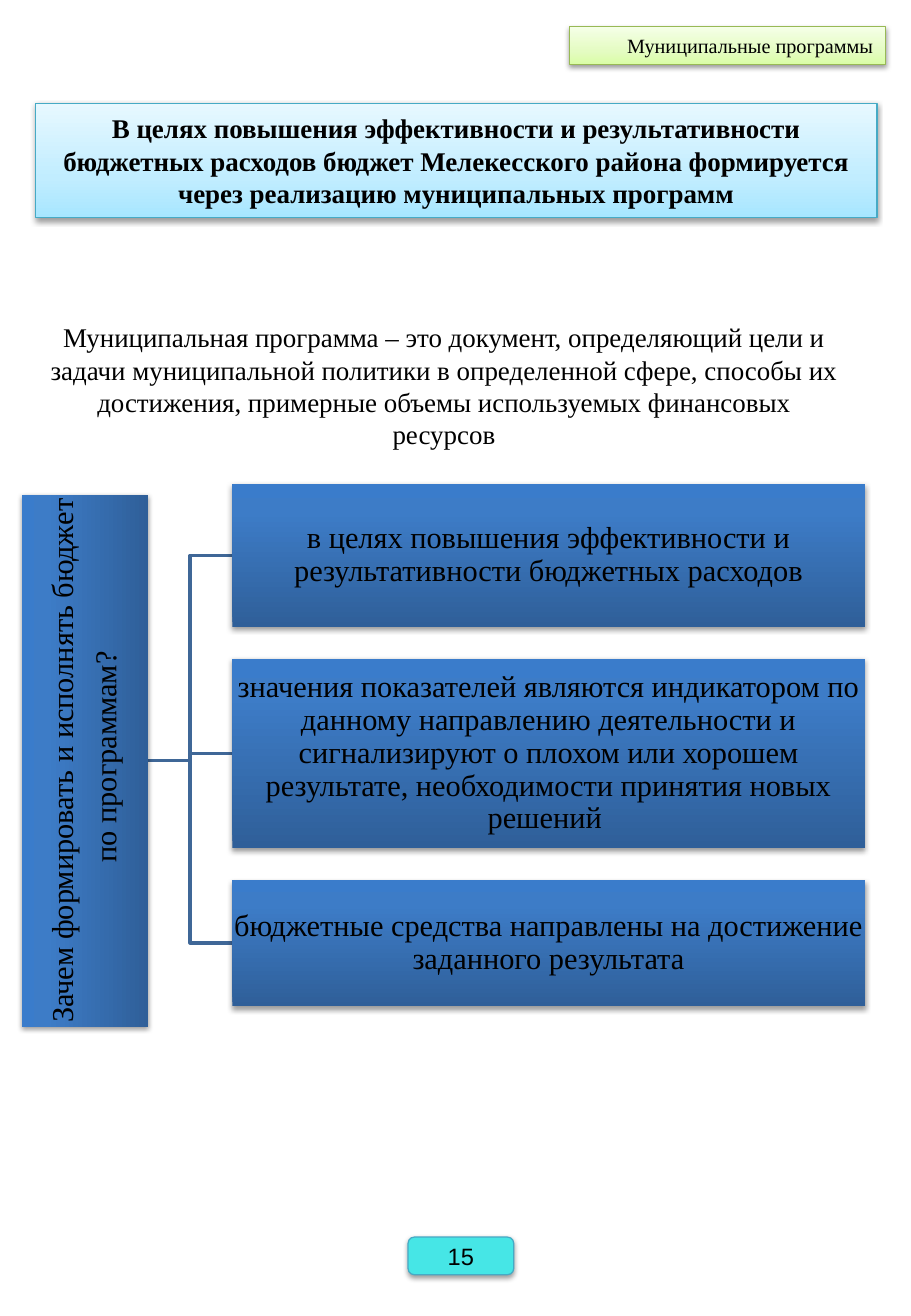
import copy
from dataclasses import dataclass

import pptx
import pptx.dml.color
import pptx.enum.shapes
import pptx.enum.text
import pptx.oxml
import pptx.oxml.ns
import pptx.util

SHAPE = pptx.enum.shapes.MSO_SHAPE
ALIGN = pptx.enum.text.PP_ALIGN
INCH = pptx.util.Inches(1)


@dataclass(frozen=True)
class Theme:
    serif: str = "Times New Roman"
    sans: str = "Arial"
    text: str = "000000"
    branch: str = "3F6797"
    blue_edge: str = "46AAC5"
    green_edge: str = "98B955"
    page_fill: str = "46E6E6"
    # Gradient stops run from the bottom edge to the top edge.
    sky: tuple = ((0, "A7E6FF"), (0.35, "C1EDFF"), (1, "E7F8FF"))
    lime: tuple = ((0, "DAFDA7"), (0.35, "E4FCC2"), (1, "F5FFE7"))
    navy: tuple = ((0, "2F5F99"), (0.8, "3D7CC7"), (1, "3A7CCB"))
    tag_size: int = 12
    page_size: int = 14
    body_size: int = 16
    diagram_size: int = 18


THEME = Theme()


@dataclass(frozen=True)
class Box:
    left: float
    top: float
    width: float
    height: float

    def inner(self, x, y, w, h):
        """Return an inner box given in percent of this one."""
        return Box(self.left + self.width * x / 100, self.top + self.height * y / 100,
                   self.width * w / 100, self.height * h / 100)

    def emu(self):
        return [round(v * INCH) for v in (self.left, self.top, self.width, self.height)]

    def middle(self):
        return self.top + self.height / 2

    def turned(self):
        """Return the box that covers this one after a quarter turn."""
        return Box(self.left + (self.width - self.height) / 2,
                   self.top + (self.height - self.width) / 2, self.height, self.width)


PAGE = Box(0, 0, 7.5, 10.83)


def rgb(color):
    return pptx.dml.color.RGBColor.from_string(color)


def paint(sp, fill, edge=None):
    """Apply a flat colour or gradient stops, an edge and a soft shadow."""
    if isinstance(fill, str):
        sp.fill.solid()
        sp.fill.fore_color.rgb = rgb(fill)
    else:
        sp.fill.gradient()
        sp.fill.gradient_angle = 90
        stops = sp.element.spPr.find(".//" + pptx.oxml.ns.qn("a:gsLst"))
        stops.append(copy.deepcopy(stops[-1]))
        for stop, (position, color) in zip(sp.fill.gradient_stops, fill):
            stop.position = position
            stop.color.rgb = rgb(color)
    if edge:
        sp.line.color.rgb = rgb(edge)
        sp.line.width = pptx.util.Pt(0.75)
    else:
        sp.line.fill.background()
    sp.shadow.inherit = False
    effects = sp.element.spPr.find(pptx.oxml.ns.qn("a:effectLst"))
    effects.append(pptx.oxml.parse_xml(
        f'<a:outerShdw {pptx.oxml.ns.nsdecls("a")} blurRad="40000" dist="20000" '
        'dir="5400000" rotWithShape="0"><a:srgbClr val="000000">'
        '<a:alpha val="38000"/></a:srgbClr></a:outerShdw>'))


def write(sp, lines, size, font=THEME.serif, align=ALIGN.CENTER, bold=False,
          anchor=pptx.enum.text.MSO_ANCHOR.MIDDLE):
    tf = sp.text_frame
    tf.word_wrap = True
    tf.auto_size = pptx.enum.text.MSO_AUTO_SIZE.NONE
    tf.vertical_anchor = anchor
    for i, line in enumerate(lines):
        p = tf.add_paragraph() if i else tf.paragraphs[0]
        p.alignment = align
        r = p.add_run()
        r.text = line
        r.font.name = font
        r.font.size = pptx.util.Pt(size)
        r.font.bold = bold
        r.font.color.rgb = rgb(THEME.text)


def add_tag(s, box):
    sp = s.shapes.add_shape(SHAPE.RECTANGLE, *box.emu())
    paint(sp, THEME.lime, THEME.green_edge)
    write(sp, ["Муниципальные программы"], THEME.tag_size, align=ALIGN.RIGHT)


def add_title(s, box):
    sp = s.shapes.title
    sp.left, sp.top, sp.width, sp.height = box.emu()
    paint(sp, THEME.sky, THEME.blue_edge)
    write(sp, ["В целях повышения эффективности и результативности бюджетных расходов "
               "бюджет Мелекесского района формируется через реализацию "
               "муниципальных программ"], THEME.body_size, bold=True)


def add_definition(s, box):
    sp = s.shapes.add_textbox(*box.emu())
    write(sp, ["Муниципальная программа – это документ, определяющий цели и задачи "
               "муниципальной политики в определенной сфере, способы их достижения, "
               "примерные объемы используемых финансовых ресурсов"],
          THEME.body_size, anchor=pptx.enum.text.MSO_ANCHOR.TOP)


def add_node(s, box, lines, rotation=0):
    sp = s.shapes.add_shape(SHAPE.RECTANGLE, *box.emu())
    sp.rotation = rotation
    paint(sp, THEME.navy)
    write(sp, lines, THEME.diagram_size)
    tf = sp.text_frame
    tf.margin_left = tf.margin_right = tf.margin_top = tf.margin_bottom = round(INCH * 0.01)
    for p in tf.paragraphs:
        p.line_spacing = 0.9
        p.space_after = pptx.util.Pt(THEME.diagram_size * 0.35)


def add_branch(s, root, reason):
    """Draw the stepped line from the root's right side to a reason's left side."""
    start = root.left + root.width
    bend = (start + reason.left) / 2
    points = [(start, root.middle()), (bend, root.middle()),
              (bend, reason.middle()), (reason.left, reason.middle())]
    (x, y), *rest = [(round(a * INCH), round(b * INCH)) for a, b in points]
    builder = s.shapes.build_freeform(x, y)
    builder.add_line_segments(rest, close=False)
    sp = builder.convert_to_shape()
    sp.fill.background()
    sp.line.color.rgb = rgb(THEME.branch)
    sp.line.width = pptx.util.Pt(2)
    sp.shadow.inherit = False


def add_diagram(s, box):
    reasons = [
        (26.4, "в целях повышения эффективности и результативности бюджетных расходов"),
        (34.9, "значения показателей являются индикатором по данному направлению "
               "деятельности и сигнализируют о плохом или хорошем результате, "
               "необходимости принятия новых решений "),
        (23.27, "бюджетные средства направлены на достижение заданного результата"),
    ]
    gap = 5.82
    root = box.inner(0, 2, 15, 98)
    top = 0
    placed = []
    for height, text in reasons:
        placed.append((box.inner(25, top, 75.15, height), text))
        top += height + gap
    for reason, _ in placed:
        add_branch(s, root, reason)
    add_node(s, root.turned(),
             ["Зачем формировать и исполнять бюджет", " по программам?"], rotation=270)
    for reason, text in placed:
        add_node(s, reason, [text])


def add_page_number(s, box):
    sp = s.shapes.add_shape(SHAPE.FLOWCHART_ALTERNATE_PROCESS, *box.emu())
    paint(sp, THEME.page_fill, THEME.blue_edge)
    write(sp, ["15"], THEME.page_size, font=THEME.sans)


def main():
    prs = pptx.Presentation()
    prs.slide_width, prs.slide_height = PAGE.emu()[2:]
    s = prs.slides.add_slide(prs.slide_layouts[5])
    add_title(s, PAGE.inner(3.87, 7.85, 92.4, 8.68))
    add_tag(s, PAGE.inner(62.53, 2.03, 34.67, 2.86))
    add_definition(s, PAGE.inner(3.87, 23.92, 89.73, 10.9))
    add_diagram(s, PAGE.inner(2.4, 36.75, 92.4, 41.27))
    add_page_number(s, PAGE.inner(44.8, 94, 11.6, 2.86))
    prs.save("out.pptx")


if __name__ == "__main__":
    main()
